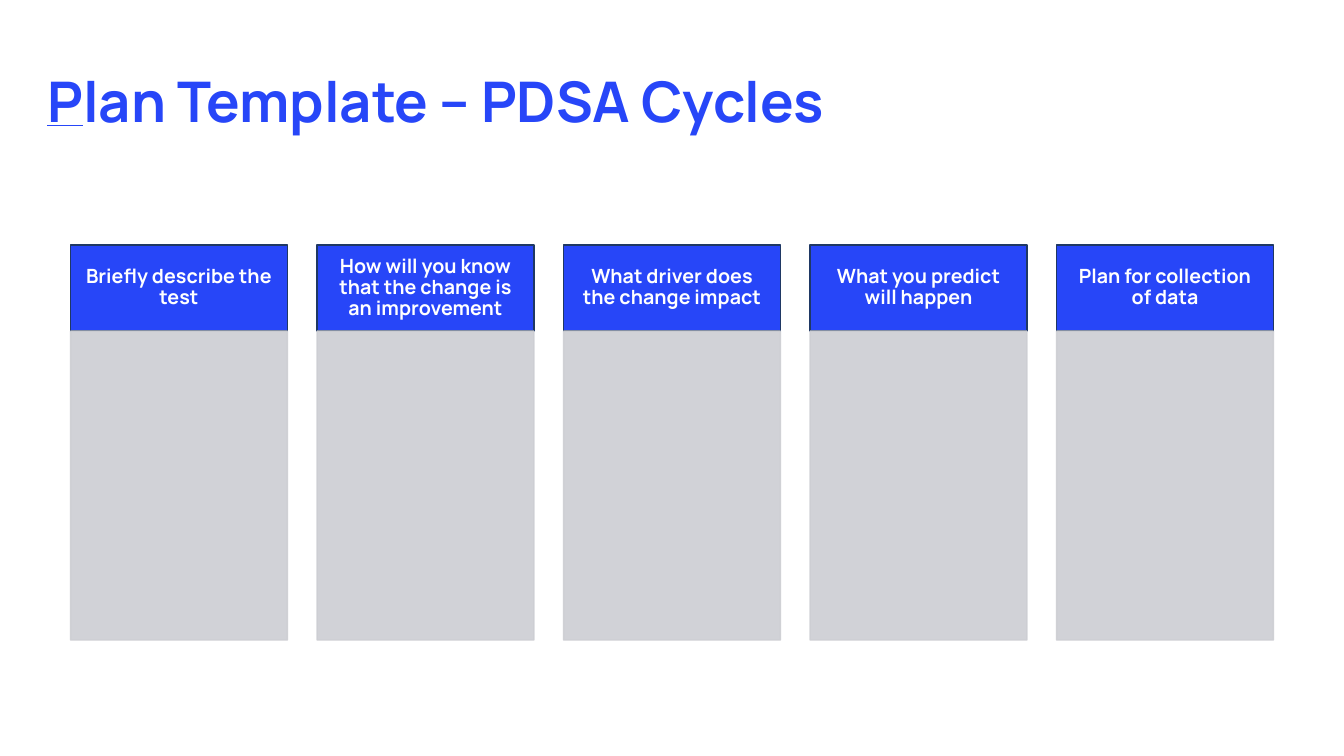
from dataclasses import dataclass

from lxml import etree
from pptx import Presentation
from pptx import util as u
from pptx.dml.color import RGBColor
from pptx.enum import shapes, text
from pptx.oxml.ns import qn


@dataclass(frozen=True)
class Theme:
    font: str = "Manrope"
    blue: RGBColor = RGBColor.from_string("2746F8")
    navy: RGBColor = RGBColor.from_string("1F3864")
    grey: RGBColor = RGBColor.from_string("CDCED3")
    white: RGBColor = RGBColor.from_string("FFFFFF")
    grey_opacity: int = 90
    title_size: int = 40
    title_leading: float = 90.2
    heading_size: int = 14
    heading_leading: float = 0.9
    border: int = 1


THEME = Theme()
SLIDE_SIZE = (13.33, 7.5)
TITLE_BOX = (0.47, 0.07, 12.38, 1.19)
COLUMNS_BOX = (0.7, 2.43, 11.93, 3.92)
COLUMN_GAP = 0.295
HEADING_HEIGHT = 0.855
QUESTIONS = [
    "Briefly describe the test",
    "How will you know that the change is an improvement",
    "What driver does the change impact",
    "What you predict will happen",
    "Plan for collection of data",
]


def inches(box):
    return [u.Inches(length) for length in box]


def style_font(paragraph, size, color):
    font = paragraph.font
    font.name, font.size, font.bold = THEME.font, u.Pt(size), True
    font.color.rgb = color


def add_panel(slide, box, fill, line):
    panel = slide.shapes.add_shape(shapes.MSO_SHAPE.RECTANGLE, *inches(box))
    panel.shadow.inherit = False
    panel.fill.solid()
    panel.fill.fore_color.rgb = fill
    panel.line.color.rgb = line
    panel.line.width = u.Pt(THEME.border)
    return panel


def set_opacity(panel, percent):
    """Apply one opacity to both the fill and the border."""
    for color in panel.element.spPr.iter(qn("a:srgbClr")):
        etree.SubElement(color, qn("a:alpha"), val=str(percent * 1000))


def add_title(slide, box, initial, rest):
    """Place the title with its initial letter underlined."""
    frame = slide.shapes.add_textbox(*inches(box)).text_frame
    frame.word_wrap = True
    frame.margin_left = frame.margin_right = 0
    frame.margin_top = frame.margin_bottom = 0
    title = frame.paragraphs[0]
    title.line_spacing = u.Pt(THEME.title_leading)
    style_font(title, THEME.title_size, THEME.blue)
    for part, underlined in ((initial, True), (rest, False)):
        run = title.add_run()
        run.text = part
        run.font.underline = underlined


def add_heading(slide, box, question):
    frame = add_panel(slide, box, THEME.blue, THEME.navy).text_frame
    frame.word_wrap = True
    frame.vertical_anchor = text.MSO_ANCHOR.MIDDLE
    frame.margin_left = frame.margin_right = u.Inches(0.11)
    frame.margin_top = frame.margin_bottom = u.Inches(0.06)
    heading = frame.paragraphs[0]
    heading.text = question
    heading.alignment = text.PP_ALIGN.CENTER
    heading.line_spacing = THEME.heading_leading
    style_font(heading, THEME.heading_size, THEME.white)


def add_columns(slide, box, questions):
    """Share the box among equal columns, each a heading over an answer area."""
    left, top, width, height = box
    column_width = (width - COLUMN_GAP * (len(questions) - 1)) / len(questions)
    for index, question in enumerate(questions):
        x = left + index * (column_width + COLUMN_GAP)
        add_heading(slide, (x, top, column_width, HEADING_HEIGHT), question)
        answer_box = (x, top + HEADING_HEIGHT, column_width, height - HEADING_HEIGHT)
        answer = add_panel(slide, answer_box, THEME.grey, THEME.grey)
        set_opacity(answer, THEME.grey_opacity)


def main():
    deck = Presentation()
    deck.slide_width, deck.slide_height = inches(SLIDE_SIZE)
    slide = deck.slides.add_slide(deck.slide_layouts[6])
    add_columns(slide, COLUMNS_BOX, QUESTIONS)
    add_title(slide, TITLE_BOX, "P", "lan Template – PDSA Cycles")
    deck.save("out.pptx")


if __name__ == "__main__":
    main()
